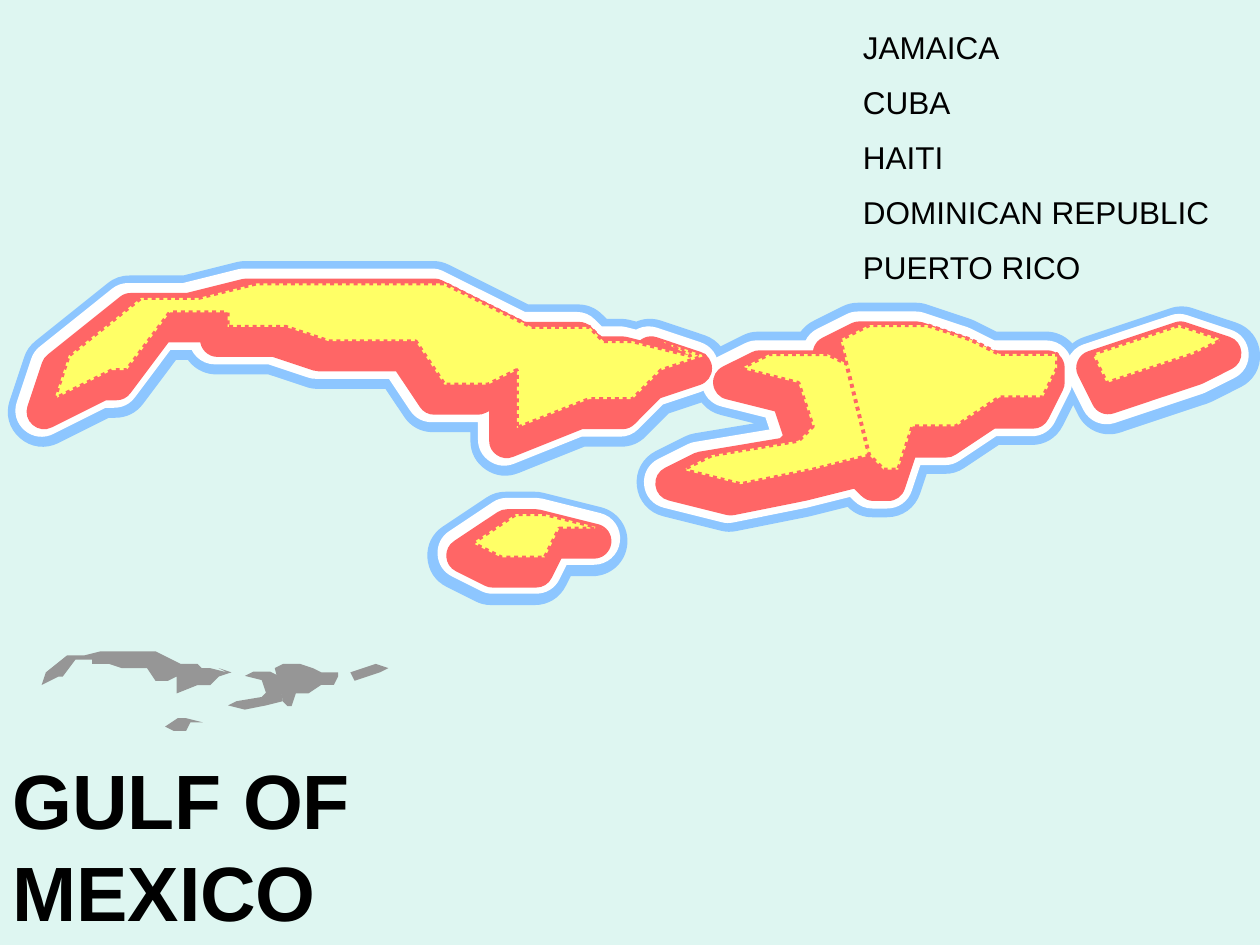
from lxml import etree
from pptx import Presentation
from pptx.dml.color import RGBColor
from pptx.enum.dml import MSO_LINE
from pptx.enum.text import MSO_ANCHOR
from pptx.oxml.ns import qn
from pptx.util import Pt

DOTTED = MSO_LINE.ROUND_DOT
MIDDLE, TOP = MSO_ANCHOR.MIDDLE, MSO_ANCHOR.TOP
FONT = "Arial"
COLORS = {
    "sea": "DEF6F1", "land": "FFFF66", "shallows": "8DC6FF", "surf": "FFFFFF",
    "coast": "FF6666", "inset": "969696", "text": "000000",
}

TITLE = "GULF OF\vMEXICO"
COUNTRIES = ["JAMAICA", "CUBA", "HAITI", "DOMINICAN REPUBLIC", "PUERTO RICO"]

# Island outlines in grid units, each from its own top left corner
ISLANDS = {
    "Cuba": [
        (0, 8), (1, 5), (6, 1), (10, 1), (14, 0), (20, 0), (22, 0), (27, 0),
        (33, 3), (37, 3), (38, 4), (40, 4), (44, 5), (42, 4), (45, 5), (42, 6),
        (40, 8), (37, 8), (32, 10), (32, 6), (30, 7), (27, 7), (25, 4), (22, 4),
        (19, 4), (16, 3), (12, 3), (12, 2), (8, 2), (5, 6), (4, 6)],
    "Jamaica": [(0, 2), (3, 0), (5, 0), (9, 1), (6, 1), (5, 3), (2, 3)],
    "Haiti": [
        (4, 1), (6, 0), (10, 0), (12, 1), (13, 7), (9, 8), (4, 9), (0, 8),
        (2, 7), (8, 6), (9, 5), (8, 2)],
    "Dominican Republic": [
        (15, 3), (14, 5), (11, 5), (8, 7), (5, 7), (4, 10), (3, 10), (2, 9),
        (0, 1), (2, 0), (6, 0), (9, 1), (11, 2), (15, 2)],
    "Puerto Rico": [(0, 2), (3, 1), (6, 0), (9, 1), (7, 2), (4, 3), (1, 4)],
}

# Map layers from back to front; corners follow the order of ISLANDS
MAP_UNIT, INSET_UNIT = 8.26, 2.41
SHALLOWS = {
    "line": "shallows", "width": 40,
    "corners": [(24.5, 169.2), (264.2, 301), (383.8, 209.5), (473.8, 193), (625.7, 195.1)]}
SURF = {
    "line": "surf", "width": 30,
    "corners": [(23.8, 168.5), (265, 299.5), (383, 209.5), (473.8, 193), (624.2, 194.4)]}
COAST = {
    "line": "coast", "width": 20,
    "corners": [(25.2, 169.2), (265, 301), (384.5, 210.2), (474.5, 193.7), (625, 193.7)]}
INSET = {
    "fill": "inset", "unit": INSET_UNIT,
    "corners": [(23.8, 372.2), (94.3, 410.4), (130.3, 383.8), (157, 379.4), (200.2, 379.4)]}
RELIEF = {
    "line": "coast", "width": 2.25, "dash": DOTTED,
    "corners": [(31, 162), (270, 293.8), (390.2, 202.3), (480.2, 185.8), (624.2, 185.8)]}


def rgb(name):
    return RGBColor.from_string(COLORS[name])


def add_islands(shapes, corners, fill="land", unit=MAP_UNIT, line=None, width=0, dash=None):
    for outline, (left, top) in zip(ISLANDS.values(), corners):
        builder = shapes.build_freeform(*outline[0], scale=Pt(unit))
        builder.add_line_segments(outline[1:], close=True)
        island = builder.convert_to_shape(Pt(left), Pt(top))
        island.shadow.inherit = False
        island.fill.solid()
        island.fill.fore_color.rgb = rgb(fill)
        if line is None:
            island.line.fill.background()
            continue
        island.line.color.rgb = rgb(line)
        island.line.width = Pt(width)
        if dash is not None:
            island.line.dash_style = dash
        etree.SubElement(island.line._get_or_add_ln(), qn("a:round"))


def add_text(shapes, lines, box, size, bold=False, anchor=TOP, gap=0, spacing=None):
    frame = shapes.add_textbox(*map(Pt, box)).text_frame
    frame.word_wrap = True
    frame.vertical_anchor = anchor
    for index, line in enumerate(lines):
        paragraph = frame.add_paragraph() if index else frame.paragraphs[0]
        paragraph.text = line
        if index:
            paragraph.space_before = Pt(gap)
        if spacing:
            paragraph.line_spacing = spacing
        paragraph.font.name = FONT
        paragraph.font.size = Pt(size)
        paragraph.font.bold = bold
        paragraph.font.color.rgb = rgb("text")


def main():
    deck = Presentation()
    deck.slide_width, deck.slide_height = Pt(720), Pt(540)
    slide = deck.slides.add_slide(deck.slide_layouts[6])
    slide.background.fill.solid()
    slide.background.fill.fore_color.rgb = rgb("sea")
    shapes = slide.shapes

    # Water and coast bands around the islands
    for layer in (SHALLOWS, SURF, COAST):
        add_islands(shapes, **layer)

    # Title and small grey map
    add_text(shapes, [TITLE], (0, 437.8, 612, 90), 44, bold=True, anchor=MIDDLE)
    add_islands(shapes.add_group_shape().shapes, **INSET)

    # Raised land with dotted borders
    add_islands(shapes, **RELIEF)

    # Country list
    add_text(shapes, COUNTRIES, (486, 12.2, 234, 159.1), 18, gap=9.9)

    deck.save("out.pptx")


if __name__ == "__main__":
    main()
